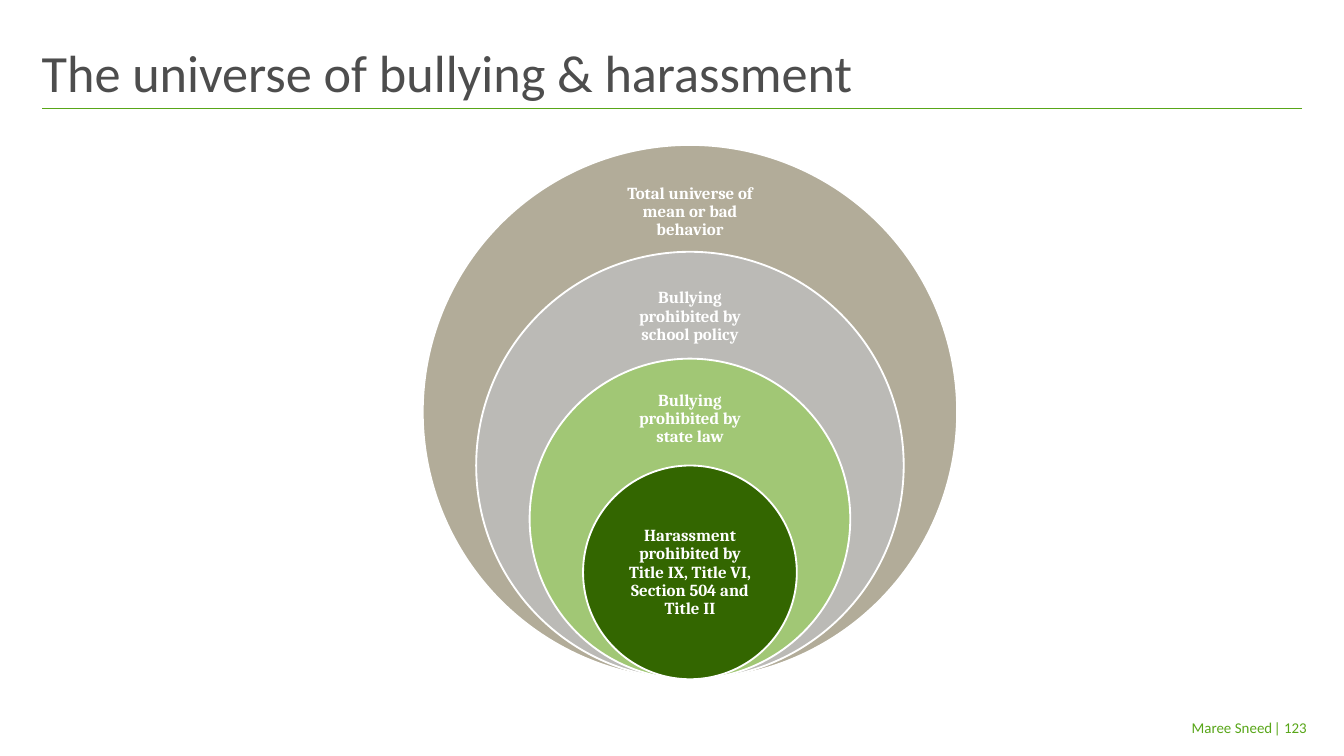
"""Build the slide of nested circles on bullying and harassment."""
from dataclasses import dataclass

from lxml import etree
from pptx import Presentation
from pptx.dml.color import RGBColor
from pptx.enum.shapes import MSO_CONNECTOR, MSO_SHAPE
from pptx.enum.text import MSO_ANCHOR, MSO_AUTO_SIZE, PP_ALIGN
from pptx.oxml.ns import qn
from pptx.slide import Slide
from pptx.util import Cm, Pt

ELLIPSE = MSO_SHAPE.OVAL
STRAIGHT = MSO_CONNECTOR.STRAIGHT
MIDDLE, BOTTOM = MSO_ANCHOR.MIDDLE, MSO_ANCHOR.BOTTOM
FIXED, GROW = MSO_AUTO_SIZE.NONE, MSO_AUTO_SIZE.SHAPE_TO_FIT_TEXT
LEFT, CENTER, RIGHT = PP_ALIGN.LEFT, PP_ALIGN.CENTER, PP_ALIGN.RIGHT

COLORS = {
    "rule": "58A618",
    "title": "4D4D4D",
    "white": "FFFFFF",
    "behavior": "AAA38E",
    "policy": "BFBFBF",
    "state": "92D050",
    "federal": "336600",
}
RULE_Y = 2.05
CENTER_X = 13.04
CIRCLES_BOTTOM = 12.84
CIRCLE_STEP = 2.02
LABEL_WIDTH = 2.83


@dataclass(frozen=True)
class Label:
    text: str
    left: float
    top: float
    width: float
    height: float
    size: float
    color: str
    font: str = "Calibri"
    align: PP_ALIGN = LEFT
    anchor: MSO_ANCHOR = MIDDLE
    insets: tuple[float, float, float, float] = (0, 0.13, 0, 0.13)
    bold: bool = False
    wrap: bool = True
    line_spacing: float = 1.0
    space_after: float = 0


@dataclass(frozen=True)
class Ring:
    text: str
    color: str
    opacity: int
    label_top: float
    label_height: float


TEXTS = [
    Label("| 123", 24.05, 13.44, 0.9, 0.61, 8, "rule", align=RIGHT,
          insets=(0, 0.13, 0.25, 0.13), wrap=False),
    Label("Maree Sneed", 16, 13.44, 8.05, 0.61, 8, "rule", align=RIGHT),
    Label("The universe of bullying & harassment", 0.79, 0.8, 23.8, 1.24, 28,
          "title", anchor=BOTTOM, insets=(0, 0.1, 0, 0.1)),
]
RINGS = [
    Ring("Total universe of mean or bad behavior", "behavior", 90, 3.25, 1.52),
    Ring("Bullying prohibited by school policy", "policy", 77, 5.26, 1.45),
    Ring("Bullying prohibited by state law", "state", 63, 7.24, 1.37),
    Ring("Harassment prohibited by Title IX, Title VI, Section 504 and Title II",
         "federal", 100, 9.82, 2.01),
]


def rgb(name: str) -> RGBColor:
    """Return the named colour."""
    return RGBColor.from_string(COLORS[name])


def draw_label(page: Slide, label: Label) -> None:
    """Add a text box holding one paragraph."""
    box = page.shapes.add_textbox(
        Cm(label.left), Cm(label.top), Cm(label.width), Cm(label.height))
    frame = box.text_frame
    frame.word_wrap = label.wrap
    frame.auto_size = FIXED if label.wrap else GROW
    frame.vertical_anchor = label.anchor
    (frame.margin_left, frame.margin_top,
     frame.margin_right, frame.margin_bottom) = map(Cm, label.insets)
    para = frame.paragraphs[0]
    para.text = label.text
    para.alignment = label.align
    para.line_spacing = label.line_spacing
    para.space_after = Pt(label.space_after)
    para.font.name = label.font
    para.font.size = Pt(label.size)
    para.font.bold = label.bold
    para.font.color.rgb = rgb(label.color)


def draw_rule(page: Slide) -> None:
    """Add the line under the title."""
    rule = page.shapes.add_connector(
        STRAIGHT, Cm(24.61), Cm(RULE_Y), Cm(0.79), Cm(RULE_Y))
    rule.line.color.rgb = rgb("rule")
    rule.line.width = Pt(0.5)
    etree.SubElement(rule._element.spPr, qn("a:effectLst"))


def draw_ring(page: Slide, ring: Ring, diameter: float) -> None:
    """Add a circle resting on the common bottom point, with its label."""
    circle = page.shapes.add_shape(
        ELLIPSE, Cm(CENTER_X - diameter / 2), Cm(CIRCLES_BOTTOM - diameter),
        Cm(diameter), Cm(diameter))
    circle.shadow.inherit = False
    circle.fill.solid()
    circle.fill.fore_color.rgb = rgb(ring.color)
    circle.line.color.rgb = rgb("white")
    circle.line.width = Pt(1)
    if ring.opacity < 100:
        fill_color = circle._element.spPr.find(qn("a:solidFill"))[0]
        etree.SubElement(fill_color, qn("a:alpha"), val=str(ring.opacity * 1000))
    draw_label(page, Label(
        ring.text, CENTER_X - LABEL_WIDTH / 2, ring.label_top, LABEL_WIDTH,
        ring.label_height, 9, "white", font="Cambria", align=CENTER,
        insets=(0.18,) * 4, bold=True, line_spacing=0.9, space_after=3.15))


def main() -> None:
    """Build and save the deck."""
    deck = Presentation()
    deck.slide_width, deck.slide_height = Cm(25.4), Cm(14.29)
    page = deck.slides.add_slide(deck.slide_layouts[6])
    draw_rule(page)
    for label in TEXTS:
        draw_label(page, label)
    for index, ring in enumerate(RINGS):
        draw_ring(page, ring, CIRCLE_STEP * (len(RINGS) + 1 - index))
    deck.save("out.pptx")


if __name__ == "__main__":
    main()
